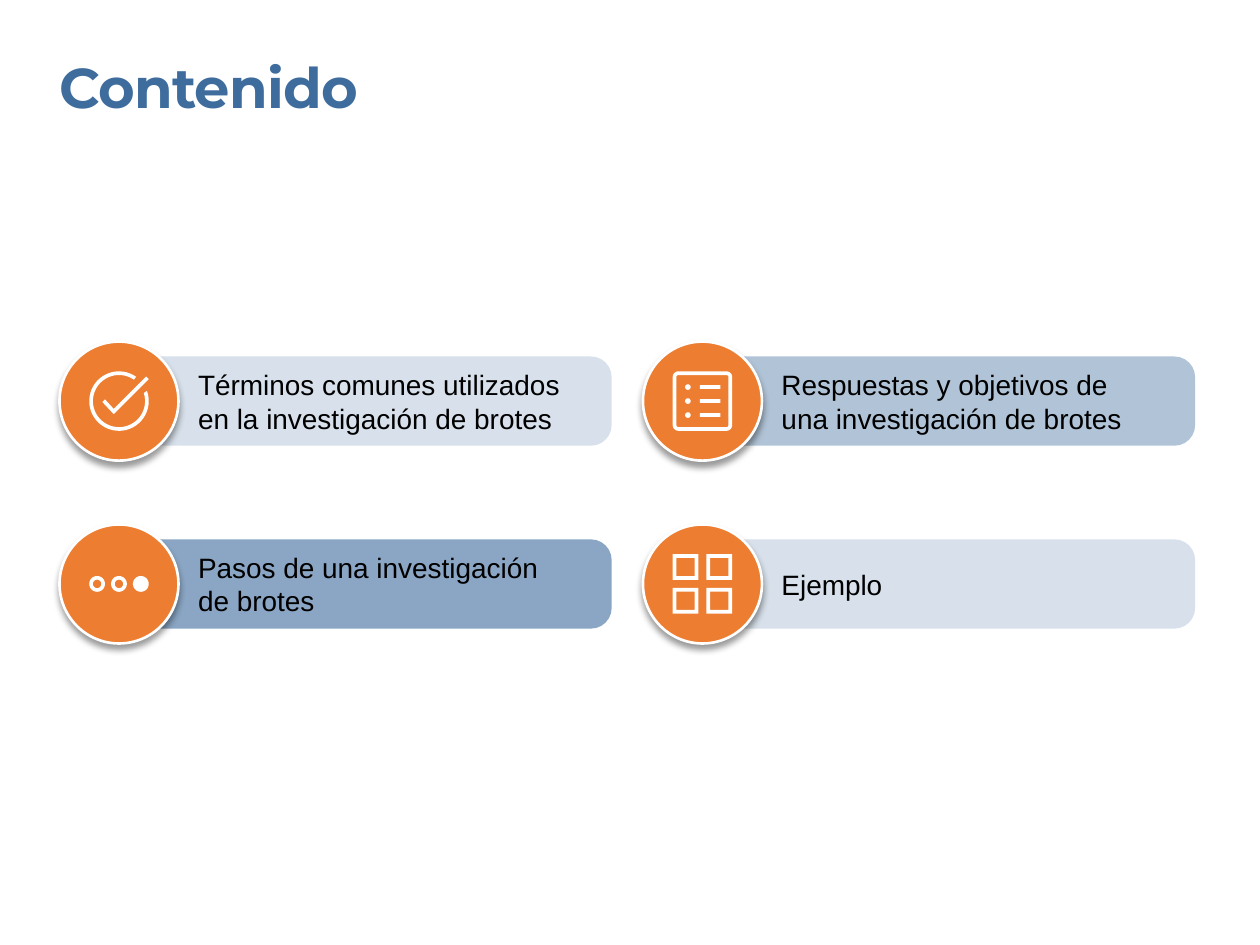
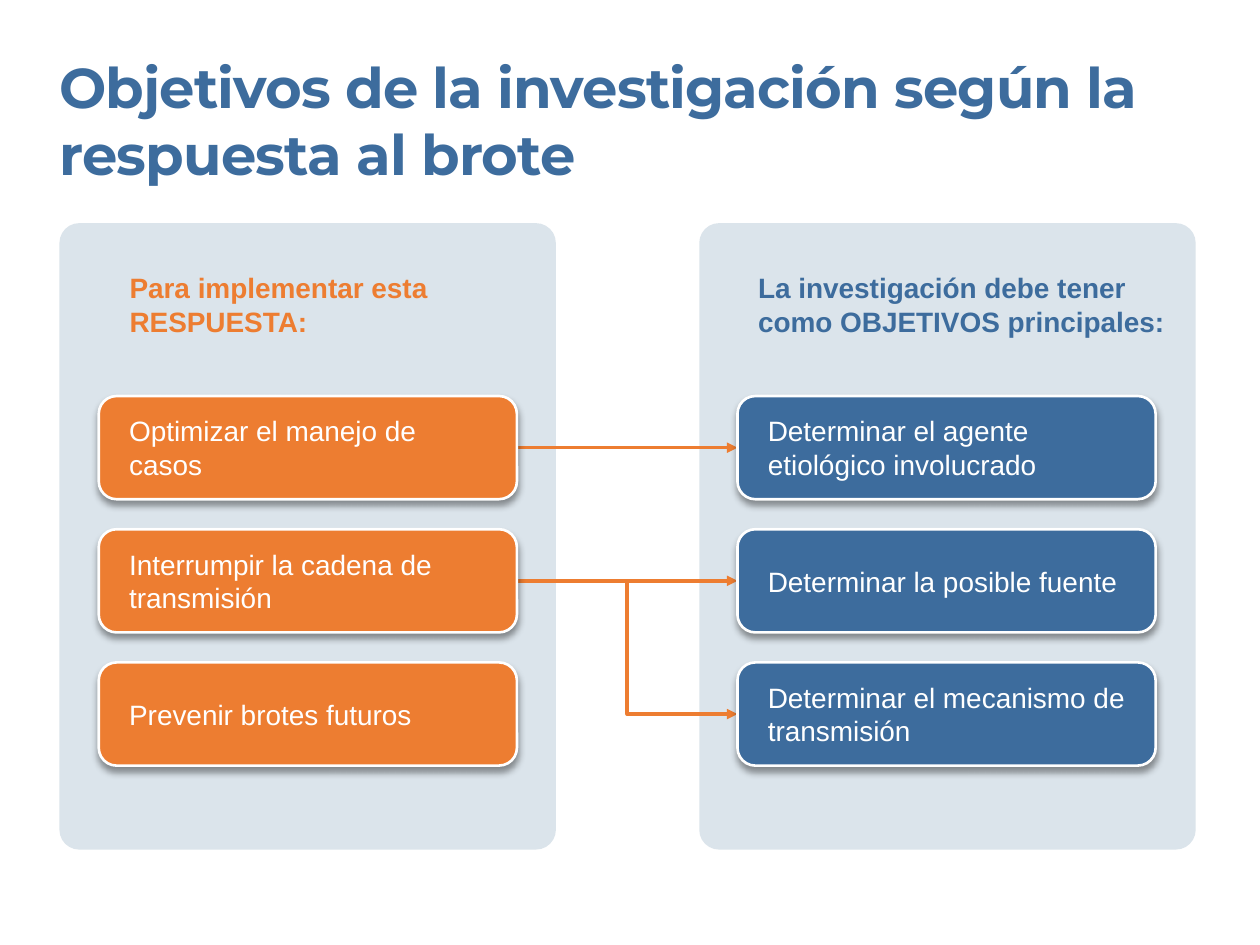
"""Build two slides on outbreak investigation: contents and objectives."""
import math

import pptx
import pptx.dml.color
import pptx.enum.shapes
import pptx.enum.text
import pptx.oxml
import pptx.oxml.ns
import pptx.util

Pt = pptx.util.Pt
qn = pptx.oxml.ns.qn
SHAPE = pptx.enum.shapes.MSO_SHAPE
CONNECTOR = pptx.enum.shapes.MSO_CONNECTOR
ANCHOR = pptx.enum.text.MSO_ANCHOR
NS = pptx.oxml.ns.nsdecls("a")
BLUE, ORANGE, WHITE, BLACK, PALE = "3D6C9D", "ED7D31", "FFFFFF", "000000", "DBE4EB"
ICON = 17
STROKE = 2.1


def rgb(value):
    return pptx.dml.color.RGBColor.from_string(value)


def add_xml(parent, tag, attributes="", content=""):
    parent.append(pptx.oxml.parse_xml(f"<a:{tag} {NS} {attributes}>{content}</a:{tag}>"))


def set_text(shape, text, size=16, font="Arial", color=BLACK, bold=False,
             anchor=ANCHOR.TOP, inset=(0, 0), spacing=None):
    tf = shape.text_frame
    tf.word_wrap = True
    tf.auto_size = pptx.enum.text.MSO_AUTO_SIZE.NONE
    tf.vertical_anchor = anchor
    tf.margin_left = tf.margin_right = Pt(inset[0])
    tf.margin_top = tf.margin_bottom = Pt(inset[1])
    p = tf.paragraphs[0]
    p.alignment = pptx.enum.text.PP_ALIGN.LEFT
    r = p.add_run()
    r.text = text
    r.font.size, r.font.name, r.font.bold = Pt(size), font, bold
    r.font.color.rgb = rgb(color)
    if spacing is not None:
        shape.element.find(".//" + qn("a:rPr")).set("spc", str(int(spacing * 100)))


def add_title_slide(prs, text):
    s = prs.slides.add_slide(prs.slide_layouts[5])
    title = s.shapes.title
    title.left, title.top, title.width, title.height = Pt(34), Pt(30), Pt(616), Pt(78)
    set_text(title, text, size=32, font="Montserrat", color=BLUE, bold=True, spacing=-0.5)
    return s


def add_text(s, x, y, w, h, text, **fmt):
    set_text(s.shapes.add_textbox(Pt(x), Pt(y), Pt(w), Pt(h)), text, **fmt)


def style(sp, fill, alpha=None, raised=False):
    sp.fill.solid()
    sp.fill.fore_color.rgb = rgb(fill)
    if alpha:
        color = sp.element.spPr.find(".//" + qn("a:srgbClr"))
        add_xml(color, "alpha", f'val="{alpha * 1000}"')
    sp.shadow.inherit = False
    if not raised:
        sp.line.fill.background()
        return
    sp.line.color.rgb = rgb(WHITE)
    sp.line.width = Pt(1.5)
    add_xml(sp.element.spPr.find(qn("a:effectLst")), "outerShdw",
            f'blurRad="{Pt(4)}" dist="{Pt(3)}" dir="5400000" algn="t" rotWithShape="0"',
            f'<a:srgbClr val="{BLACK}"><a:alpha val="40000"/></a:srgbClr>')


def add_block(s, kind, x, y, w, h, fill, radius=None, **look):
    sp = s.shapes.add_shape(kind, Pt(x), Pt(y), Pt(w), Pt(h))
    if radius:
        sp.adjustments[0] = radius
    style(sp, fill, **look)
    return sp


def arc(cx, cy, r, start=0, end=360, steps=48):
    angles = [math.radians(start + (end - start) * i / steps) for i in range(steps + 1)]
    return [(cx + r * math.cos(a), cy + r * math.sin(a)) for a in angles]


def box(x, y, w, h):
    return [(x, y), (x + w, y), (x + w, y + h), (x, y + h)]


def round_box(half, r):
    c = half - r
    corners = [(c, c), (-c, c), (-c, -c), (c, -c)]
    return [pt for i, (x, y) in enumerate(corners)
            for pt in arc(x, y, r, 90 * i, 90 * i + 90, 8)]


def check_icon():
    ring = arc(0, 0, ICON, -20, 305) + arc(0, 0, ICON - STROKE, 305, -18)
    tick = [(-3, 7.5), (-9.5, 0.5), (-8, -1), (-3, 4.5), (15.5, -14), (17, -12.5)]
    return [ring, tick]


def list_icon():
    rows = (-8, 0, 8)
    frame = [round_box(ICON, 3.3), round_box(ICON - STROKE, 1.2)[::-1]]
    dots = [arc(-8.3, y, 1.6, steps=16) for y in rows]
    bars = [box(-1.5, y - STROKE / 2, 11.7, STROKE) for y in rows]
    return frame + dots + bars


def dots_icon():
    discs = [arc(x, 0, 4.5) for x in (-12.5, 0, 12.5)]
    holes = [arc(x, 0, 2.4)[::-1] for x in (-12.5, 0)]
    return discs + holes


def grid_icon():
    side, starts = 14.7, (-ICON, 2.3)
    inner = side - 2 * STROKE
    corners = [(x, y) for x in starts for y in starts]
    return ([box(x, y, side, side) for x, y in corners]
            + [box(x + STROKE, y + STROKE, inner, inner)[::-1] for x, y in corners])


def add_icon(s, cx, cy, outlines):
    fb = None
    for outline in outlines:
        pts = [(Pt(cx + x), Pt(cy + y)) for x, y in outline]
        if fb is None:
            fb = s.shapes.build_freeform(*pts[0])
        else:
            fb.move_to(*pts[0])
        fb.add_line_segments(pts[1:], close=True)
    style(fb.convert_to_shape(), WHITE)


def add_topic(s, x, y, text, alpha, icon):
    add_block(s, SHAPE.ROUNDED_RECTANGLE, x + 34, y + 8.5, 281.5, 51, BLUE, 0.231, alpha=alpha)
    add_text(s, x + 79.2, y + 14.5, 210, 39, text, anchor=ANCHOR.MIDDLE)
    add_block(s, SHAPE.OVAL, x, y, 68, 68, ORANGE, raised=True)
    add_icon(s, x + 34, y + 34, icon)


def add_panel(s, x, heading_x, heading, color):
    add_block(s, SHAPE.ROUNDED_RECTANGLE, x, 127.5, 283.7, 358, PALE, 0.04)
    add_text(s, heading_x, 154.8, 239, 39, heading, color=color, bold=True)


def add_cards(s, x, texts, color):
    cards = []
    for i, text in enumerate(texts):
        card = add_block(s, SHAPE.ROUNDED_RECTANGLE, x, 226.3 + 76.1 * i, 239, 59,
                         color, 0.173, raised=True)
        set_text(card, text, color=WHITE, anchor=ANCHOR.MIDDLE, inset=(14.4, 8.6))
        cards.append(card)
    return cards


def add_arrow(s, start, end, kind, behind):
    c = s.shapes.add_connector(kind, 0, 0, 0, 0)
    c.begin_connect(start, 3)
    c.end_connect(end, 1)
    c.line.color.rgb = rgb(ORANGE)
    c.line.width = Pt(2)
    add_xml(c.element.spPr.find(qn("a:ln")), "tailEnd", 'type="triangle"')
    add_xml(c.element.spPr, "effectLst")
    behind.element.addprevious(c.element)


def contents_slide(prs):
    s = add_title_slide(prs, "Contenido")
    topics = [
        ("Términos comunes utilizados en la investigación de brotes", 20, check_icon()),
        ("Respuestas y objetivos de una investigación de brotes", 40, list_icon()),
        ("Pasos de una investigación de brotes", 60, dots_icon()),
        ("Ejemplo", 20, grid_icon()),
    ]
    for i, topic in enumerate(topics):
        add_topic(s, 34 + 333.4 * (i % 2), 195.2 + 104.5 * (i // 2), *topic)


def objectives_slide(prs):
    s = add_title_slide(prs, "Objetivos de la investigación según la respuesta al brote")
    add_panel(s, 34, 74, "Para implementar esta RESPUESTA:", ORANGE)
    add_panel(s, 399.6, 433.2, "La investigación debe tener como OBJETIVOS principales:", BLUE)
    responses = add_cards(s, 56.4, ["Optimizar el manejo de casos",
                                    "Interrumpir la cadena de transmisión",
                                    "Prevenir brotes futuros"], ORANGE)
    goals = add_cards(s, 421.4, ["Determinar el agente etiológico involucrado",
                                 "Determinar la posible fuente",
                                 "Determinar el mecanismo de transmisión"], BLUE)
    for start, end, kind in [(0, 0, CONNECTOR.STRAIGHT), (1, 1, CONNECTOR.STRAIGHT),
                             (1, 2, CONNECTOR.ELBOW)]:
        add_arrow(s, responses[start], goals[end], kind, responses[0])


def main():
    prs = pptx.Presentation()
    prs.slide_width, prs.slide_height = Pt(720), Pt(540)
    contents_slide(prs)
    objectives_slide(prs)
    prs.save("out.pptx")


if __name__ == "__main__":
    main()
